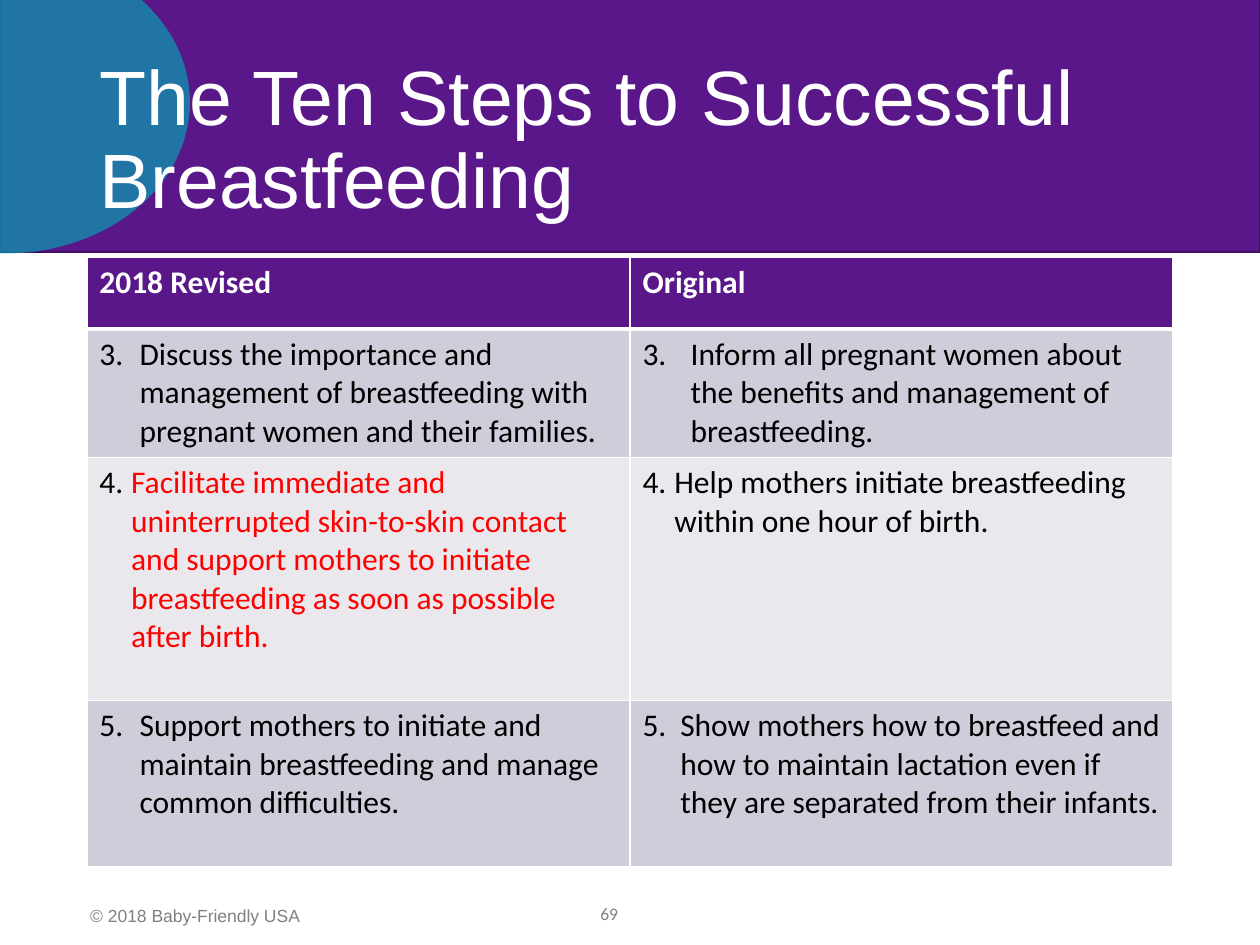
from dataclasses import dataclass
from typing import Optional

from lxml.etree import SubElement
from pptx import Presentation
from pptx.dml.color import RGBColor
from pptx.enum.shapes import MSO_SHAPE
from pptx.enum.text import MSO_ANCHOR, MSO_AUTO_SIZE, PP_ALIGN
from pptx.oxml.ns import qn
from pptx.util import Cm, Pt


@dataclass(frozen=True)
class Theme:
    purple: str = "59178A"
    purple_edge: str = "421166"
    teal: str = "00ADB5"
    white: str = "FFFFFF"
    black: str = "000000"
    red: str = "FF0000"
    gray: str = "808080"
    band_dark: str = "D1CCDA"
    band_light: str = "EAE8ED"
    heading_font: str = "Arial"
    body_font: str = "Calibri"
    title_size: int = 44
    body_size: int = 18
    footer_size: int = 10


@dataclass(frozen=True)
class Box:
    left: float
    top: float
    width: float
    height: float

    def lengths(self) -> tuple:
        return Cm(self.left), Cm(self.top), Cm(self.width), Cm(self.height)


@dataclass(frozen=True)
class Step:
    number: int
    wording: str
    hanging: float
    color: str = Theme.black
    auto_numbered: bool = False


@dataclass(frozen=True)
class StepRow:
    height: float
    fill: str
    revised: Step
    original: Step


THEME = Theme()
HEADINGS = ("2018 Revised", "Original")
HEADING_HEIGHT = 1.45
TABLE_BOX = Box(1.75, 5.18, 21.9, 12.29)
STEP_ROWS = (
    StepRow(
        2.59, THEME.band_dark,
        Step(3, "Discuss the importance and management of breastfeeding with "
                "pregnant women and their families.", 0.81),
        Step(3, "Inform all pregnant women about the benefits and management "
                "of breastfeeding.", 0.97, auto_numbered=True),
    ),
    StepRow(
        4.9, THEME.band_light,
        Step(4, "Facilitate immediate and uninterrupted skin-to-skin contact "
                "and support mothers to initiate breastfeeding as soon as "
                "possible after birth.", 0.64, color=THEME.red),
        Step(4, "Help mothers initiate breastfeeding within one hour of birth.", 0.64),
    ),
    StepRow(
        3.35, THEME.band_dark,
        Step(5, "Support mothers to initiate and maintain breastfeeding and "
                "manage common difficulties.", 0.81),
        Step(5, "Show mothers how to breastfeed and how to maintain lactation "
                "even if they are separated from their infants.", 0.76),
    ),
)


def write(paragraph, text: str, *, size: int = THEME.body_size,
          color: str = THEME.black, font: str = THEME.body_font,
          bold: bool = False, align: PP_ALIGN = PP_ALIGN.LEFT) -> None:
    paragraph.alignment = align
    run = paragraph.add_run()
    run.text = text
    run.font.size = Pt(size)
    run.font.name = font
    run.font.bold = bold
    run.font.color.rgb = RGBColor.from_string(color)


def add_backdrop(slide, preset: MSO_SHAPE, box: Box, fill: str, order: int,
                 edge: Optional[str] = None, opacity: Optional[int] = None) -> None:
    backdrop = slide.shapes.add_shape(preset, *box.lengths())
    backdrop.shadow.inherit = False
    backdrop.fill.solid()
    backdrop.fill.fore_color.rgb = RGBColor.from_string(fill)
    if edge:
        backdrop.line.color.rgb = RGBColor.from_string(edge)
        backdrop.line.width = Pt(1)
    else:
        backdrop.line.fill.background()
    if opacity:
        tint = backdrop.element.spPr.find(f"{qn('a:solidFill')}/{qn('a:srgbClr')}")
        SubElement(tint, qn("a:alpha"), val=str(opacity * 1000))
    slide.shapes.element.insert(2 + order, backdrop.element)


def add_footer(slide, text: str, box: Box, font: str, align: PP_ALIGN,
               anchor: MSO_ANCHOR) -> None:
    footer = slide.shapes.add_textbox(*box.lengths()).text_frame
    footer.word_wrap = True
    footer.vertical_anchor = anchor
    write(footer.paragraphs[0], text, size=THEME.footer_size,
          color=THEME.gray, font=font, align=align)


def fill_title(slide, text: str, box: Box) -> None:
    title = slide.shapes.title
    title.left, title.top, title.width, title.height = box.lengths()
    frame = title.text_frame
    frame.word_wrap = True
    frame.auto_size = MSO_AUTO_SIZE.NONE
    frame.vertical_anchor = MSO_ANCHOR.MIDDLE
    frame.paragraphs[0].line_spacing = 0.9
    write(frame.paragraphs[0], text, size=THEME.title_size,
          color=THEME.white, font=THEME.heading_font)


def style_cell(cell, fill: str, top: int = 1, bottom: int = 1) -> None:
    properties = cell._tc.get_or_add_tcPr()
    for side, points in (("L", 1), ("R", 1), ("T", top), ("B", bottom)):
        border = SubElement(properties, qn(f"a:ln{side}"), w=str(Pt(points)))
        paint = SubElement(border, qn("a:solidFill"))
        SubElement(paint, qn("a:srgbClr"), val=THEME.white)
    cell.fill.solid()
    cell.fill.fore_color.rgb = RGBColor.from_string(fill)


def write_step(cell, step: Step) -> None:
    paragraph = cell.text_frame.paragraphs[0]
    properties = paragraph._p.get_or_add_pPr()
    properties.set("marL", str(Cm(step.hanging)))
    properties.set("indent", str(-Cm(step.hanging)))
    if step.auto_numbered:
        SubElement(properties, qn("a:buAutoNum"), type="arabicPeriod",
                   startAt=str(step.number))
    else:
        write(paragraph, f"{step.number}.\t")
    write(paragraph, step.wording, color=step.color)


def add_steps_table(slide) -> None:
    table = slide.shapes.add_table(
        len(STEP_ROWS) + 1, len(HEADINGS), *TABLE_BOX.lengths()).table
    table.horz_banding = False
    table.rows[0].height = Cm(HEADING_HEIGHT)
    for column, heading in enumerate(HEADINGS):
        table.columns[column].width = Cm(TABLE_BOX.width / len(HEADINGS))
        cell = table.cell(0, column)
        style_cell(cell, THEME.purple, bottom=3)
        write(cell.text_frame.paragraphs[0], heading, color=THEME.white, bold=True)
    for index, step_row in enumerate(STEP_ROWS, start=1):
        table.rows[index].height = Cm(step_row.height)
        for column, step in enumerate((step_row.revised, step_row.original)):
            cell = table.cell(index, column)
            style_cell(cell, step_row.fill, top=3 if index == 1 else 1)
            write_step(cell, step)


def main() -> None:
    deck = Presentation()
    deck.slide_width, deck.slide_height = Cm(25.4), Cm(19.05)
    slide = deck.slides.add_slide(deck.slide_layouts[5])
    add_backdrop(slide, MSO_SHAPE.RECTANGLE, Box(0, -0.1, 25.4, 5.18),
                 THEME.purple, 0, edge=THEME.purple_edge)
    add_backdrop(slide, MSO_SHAPE.OVAL, Box(-3.61, -0.99, 7.44, 6.1),
                 THEME.teal, 1, opacity=63)
    fill_title(slide, "The Ten Steps to Successful Breastfeeding",
               Box(1.75, 1.02, 21.9, 3.68))
    add_footer(slide, "© 2018 Baby-Friendly USA", Box(1.57, 18.11, 5.33, 0.69),
               THEME.heading_font, PP_ALIGN.LEFT, MSO_ANCHOR.TOP)
    add_footer(slide, "69", Box(9.42, 17.91, 5.72, 1.02),
               THEME.body_font, PP_ALIGN.CENTER, MSO_ANCHOR.MIDDLE)
    add_steps_table(slide)
    deck.save("out.pptx")


if __name__ == "__main__":
    main()
